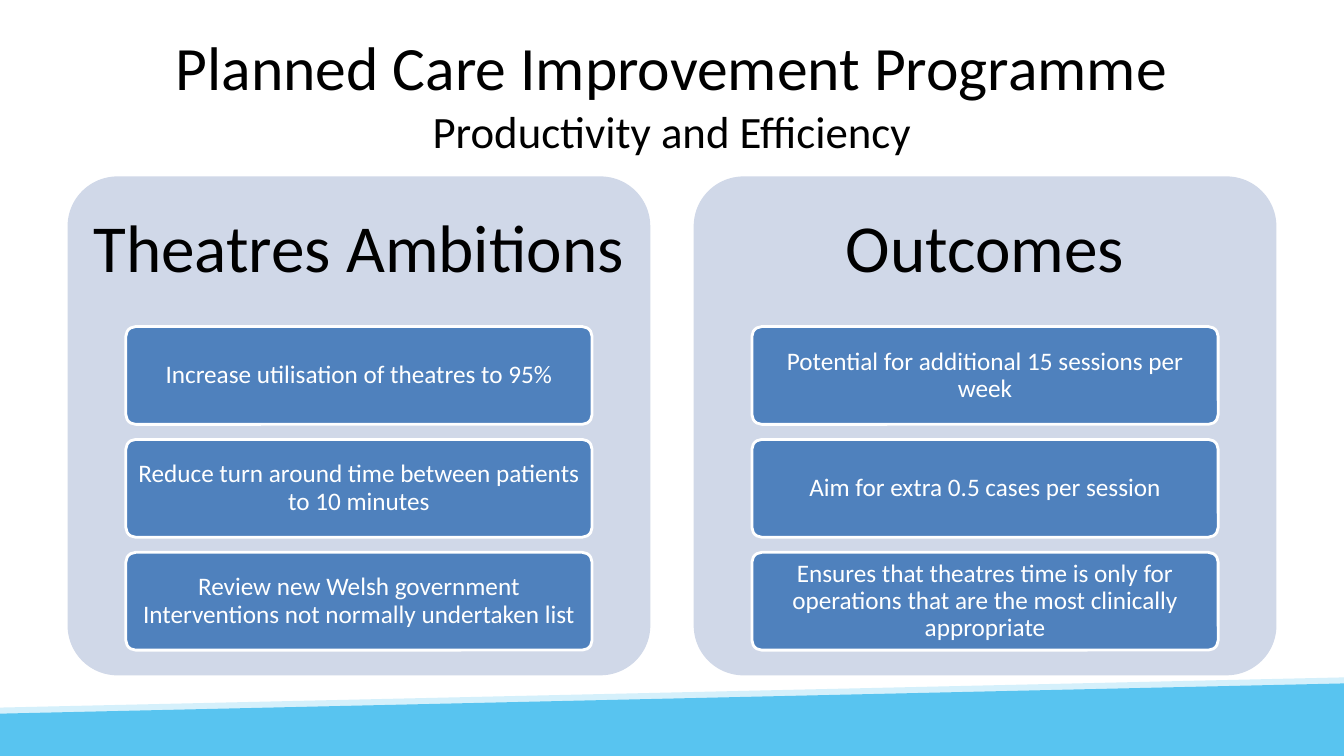
"""Build the Planned Care Improvement Programme slide on theatre ambitions and outcomes."""
from pptx import Presentation
from pptx.dml.color import RGBColor
from pptx.enum.shapes import MSO_SHAPE
from pptx.enum.text import MSO_ANCHOR, MSO_AUTO_SIZE, PP_ALIGN
from pptx.util import Inches, Pt

COLORS = {
    "text": "000000",
    "white": "FFFFFF",
    "panel": "D0D8E8",
    "card": "4F81BD",
    "pale wave": "D5F0FB",
    "wave": "58C4F0",
}
FONT = "Calibri"
WIDTH, HEIGHT = 13.33, 7.5
MARGIN = 0.67
PANEL_TOP, PANEL_WIDTH, PANEL_HEIGHT, PANEL_PITCH = 1.75, 5.78, 4.95, 6.21
HEADING_HEIGHT = 0.3 * PANEL_HEIGHT
CARD_TOP, CARD_WIDTH, CARD_HEIGHT, CARD_PITCH = 3.24, 0.8 * PANEL_WIDTH, 0.97, 1.12

COLUMNS = [
    ("Theatres Ambitions", [
        "Increase utilisation of theatres to 95%",
        "Reduce turn around time between patients to 10 minutes",
        "Review new Welsh government Interventions not normally undertaken list",
    ]),
    ("Outcomes", [
        "Potential for additional 15 sessions per week",
        "Aim for extra 0.5 cases per session",
        "Ensures that theatres time is only for operations that are the most clinically appropriate",
    ]),
]
WAVES = [
    ("pale wave", [(0, 7.02), (WIDTH, 6.72), (WIDTH, HEIGHT), (0, 7.45)]),
    ("wave", [(0, 7.08), (WIDTH, 6.78), (WIDTH, HEIGHT), (0, HEIGHT)]),
]


def write_text(shape, lines, color, inset_x, inset_y, spacing):
    """Centre the (text, size) lines in a shape as one paragraph."""
    frame = shape.text_frame
    frame.word_wrap = True
    frame.auto_size = MSO_AUTO_SIZE.NONE
    frame.vertical_anchor = MSO_ANCHOR.MIDDLE
    frame.margin_left = frame.margin_right = Inches(inset_x)
    frame.margin_top = frame.margin_bottom = Inches(inset_y)
    paragraph = frame.paragraphs[0]
    paragraph.alignment = PP_ALIGN.CENTER
    paragraph.line_spacing = spacing
    for index, (text, size) in enumerate(lines):
        if index:
            paragraph.add_line_break()
        run = paragraph.add_run()
        run.text = text
        run.font.name = FONT
        run.font.size = Pt(size)
        run.font.color.rgb = RGBColor.from_string(COLORS[color])


def add_rounded_box(slide, left, top, width, height, color):
    """Add a softly rounded box without outline or shadow."""
    shape = slide.shapes.add_shape(
        MSO_SHAPE.ROUNDED_RECTANGLE, Inches(left), Inches(top), Inches(width), Inches(height))
    shape.adjustments[0] = 0.1
    shape.shadow.inherit = False
    shape.fill.solid()
    shape.fill.fore_color.rgb = RGBColor.from_string(COLORS[color])
    shape.line.fill.background()
    return shape


presentation = Presentation()
presentation.slide_width = Inches(WIDTH)
presentation.slide_height = Inches(HEIGHT)
slide = presentation.slides.add_slide(presentation.slide_layouts[5])

for color, points in WAVES:
    corners = [(Inches(x), Inches(y)) for x, y in points]
    builder = slide.shapes.build_freeform(*corners[0])
    builder.add_line_segments(corners[1:], close=True)
    wave = builder.convert_to_shape()
    wave.shadow.inherit = False
    wave.fill.solid()
    wave.fill.fore_color.rgb = RGBColor.from_string(COLORS[color])
    wave.line.fill.background()

title = slide.shapes.title
title.left, title.top = Inches(MARGIN), Inches(0.3)
title.width, title.height = Inches(WIDTH - 2 * MARGIN), Inches(HEIGHT / 6)
title_lines = [("Planned Care Improvement Programme", 44), ("Productivity and Efficiency", 32)]
write_text(title, title_lines, "text", 0.1, 0.05, 1.0)

for column, (heading, cards) in enumerate(COLUMNS):
    panel_left = MARGIN + column * PANEL_PITCH
    add_rounded_box(slide, panel_left, PANEL_TOP, PANEL_WIDTH, PANEL_HEIGHT, "panel")
    heading_box = slide.shapes.add_textbox(
        Inches(panel_left), Inches(PANEL_TOP), Inches(PANEL_WIDTH), Inches(HEADING_HEIGHT))
    write_text(heading_box, [(heading, 48)], "text", 0.2, 0.2, 0.9)

    card_left = panel_left + (PANEL_WIDTH - CARD_WIDTH) / 2
    for row, text in enumerate(cards):
        card_top = CARD_TOP + row * CARD_PITCH
        card = add_rounded_box(slide, card_left, card_top, CARD_WIDTH, CARD_HEIGHT, "card")
        card.line.color.rgb = RGBColor.from_string(COLORS["white"])
        card.line.width = Pt(2)
        write_text(card, [(text, 18)], "white", 0.05, 0.04, 0.9)

presentation.save("out.pptx")
